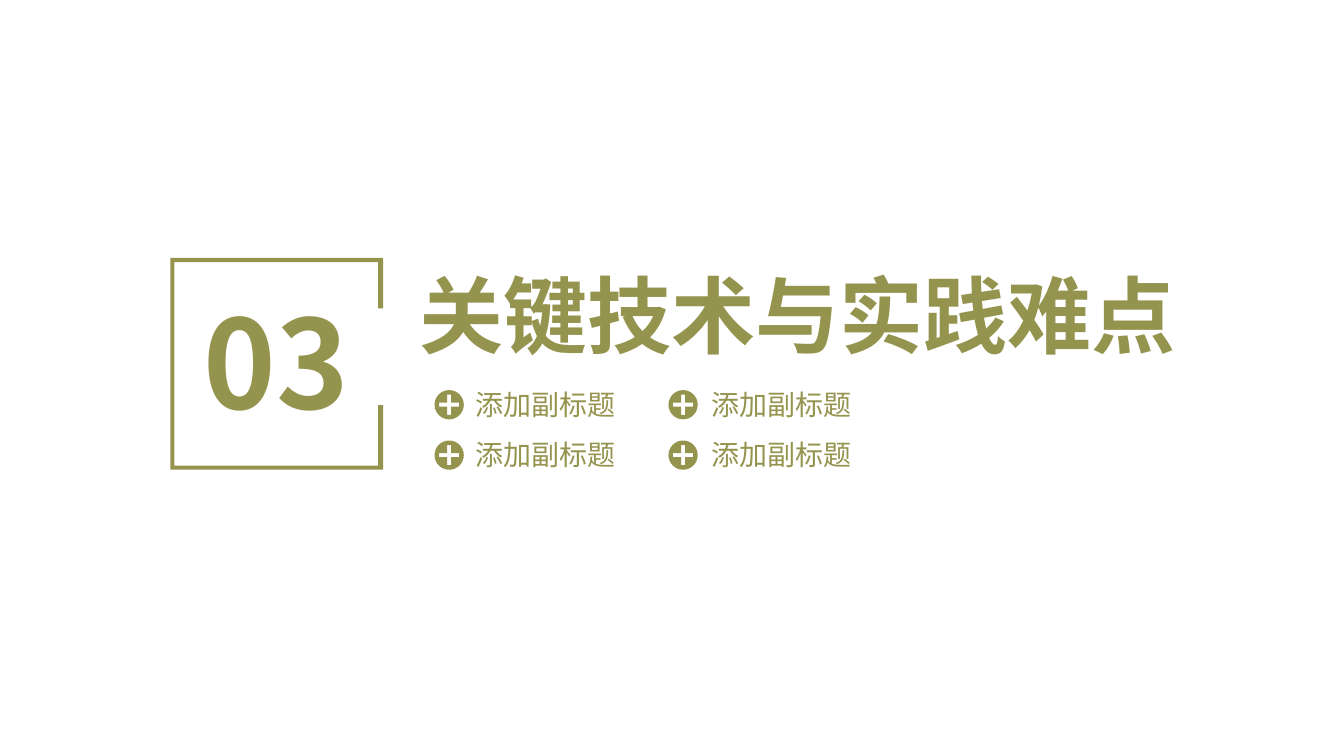
from lxml import etree
from pptx import Presentation
from pptx.dml.color import RGBColor
from pptx.enum.text import MSO_ANCHOR, PP_ALIGN
from pptx.oxml.ns import qn
from pptx.util import Inches, Pt

OLIVE = RGBColor(0x95, 0x94, 0x4F)
FONT = "Noto Sans CJK SC"
LEFT, CENTER = PP_ALIGN.LEFT, PP_ALIGN.CENTER
TOP = MSO_ANCHOR.TOP
TITLE_LAYOUT = 5

ICON_SIZE = 0.29
PLUS_REACH = 0.1
PLUS_HALF = 0.02
ARC_HANDLE = 0.55

ICON_LEFTS = (4.31, 6.63)
LABEL_LEFTS = (4.62, 6.96)
# top of the labels, top of the icons, widths of the two labels
LABEL_ROWS = ((3.8, 3.87, (1.62, 1.76)), (4.29, 4.37, (2.96, 3.04)))

FRAME = [
    (1.69, 2.56), (3.8, 2.56), (3.8, 3.06), (3.75, 3.06),
    (3.75, 2.6), (1.73, 2.6), (1.73, 4.62), (3.75, 4.62),
    (3.75, 4.02), (3.8, 4.02), (3.8, 4.66), (1.69, 4.66),
]


def write_text(box, text, size, bold=False, align=LEFT, margin=None):
    frame = box.text_frame
    frame.word_wrap = True
    frame.vertical_anchor = TOP
    if margin is not None:
        for side in ("left", "top", "right", "bottom"):
            setattr(frame, f"margin_{side}", Inches(margin))
    para = frame.paragraphs[0]
    para.alignment = align
    span = para.add_run()
    span.text = text
    for name, value in {"name": FONT, "size": Pt(size), "bold": bold}.items():
        setattr(span.font, name, value)
    span.font.color.rgb = OLIVE
    east_asian = etree.SubElement(span.font._element, qn("a:ea"))
    east_asian.set("typeface", FONT)


def add_text(slide, bounds, text, size, **formats):
    box = slide.shapes.add_textbox(*map(Inches, bounds))
    write_text(box, text, size, **formats)


def add_outline(slide, contours):
    """Draw closed contours, in inches, as one filled shape."""
    contours = [[(Inches(x), Inches(y)) for x, y in points] for points in contours]
    builder = slide.shapes.build_freeform(*contours[0][0])
    for index, points in enumerate(contours):
        if index:
            builder.move_to(*points[0])
        builder.add_line_segments(points[1:], close=True)
    shape = builder.convert_to_shape()
    shape.shadow.inherit = False
    shape.fill.solid()
    shape.fill.fore_color.rgb = OLIVE
    shape.line.fill.background()
    return shape


def round_corners(shape):
    """Turn the first four lines, a diamond, into quarter circles."""
    center = (shape.width // 2, shape.height // 2)
    for line in list(shape._element.iter(qn("a:lnTo")))[:4]:
        start, end = (
            [int(step[-1].get(axis)) for axis in "xy"]
            for step in (line.getprevious(), line)
        )
        curve = etree.Element(qn("a:cubicBezTo"))
        handles = [
            [round(a + ARC_HANDLE * (b - c)) for a, b, c in zip(near, far, center)]
            for near, far in ((start, end), (end, start))
        ]
        for x, y in (*handles, end):
            etree.SubElement(curve, qn("a:pt"), x=str(x), y=str(y))
        line.getparent().replace(line, curve)


def add_plus_icon(slide, left, top):
    """Draw a disc with a plus cut out of it."""
    radius = ICON_SIZE / 2
    x, y = left + radius, top + radius
    diamond = [(x, y - radius), (x + radius, y), (x, y + radius),
               (x - radius, y), (x, y - radius)]
    arm = [(PLUS_REACH, PLUS_HALF), (PLUS_REACH, -PLUS_HALF), (PLUS_HALF, -PLUS_HALF)]
    plus = []
    for _ in range(4):
        plus += [(x + dx, y + dy) for dx, dy in arm]
        arm = [(dy, -dx) for dx, dy in arm]
    round_corners(add_outline(slide, [diamond, plus]))


def add_title(slide, bounds, text):
    title = slide.shapes.title
    for name, value in zip(("left", "top", "width", "height"), bounds):
        setattr(title, name, Inches(value))
    write_text(title, text, 60, bold=True, margin=0)


def main():
    deck = Presentation()
    deck.slide_width, deck.slide_height = Inches(13.33), Inches(7.5)
    slide = deck.slides.add_slide(deck.slide_layouts[TITLE_LAYOUT])

    add_title(slide, (4.16, 2.61, 7.67, 1.01), "关键技术与实践难点")
    add_outline(slide, [FRAME])
    add_text(slide, (1.95, 2.84, 1.58, 1.48), "03", 88,
             bold=True, align=CENTER, margin=0)
    for label_top, icon_top, widths in LABEL_ROWS:
        for icon_left, label_left, width in zip(ICON_LEFTS, LABEL_LEFTS, widths):
            add_plus_icon(slide, icon_left, icon_top)
            add_text(slide, (label_left, label_top, width, 0.44), "添加副标题", 20)

    deck.save("out.pptx")


if __name__ == "__main__":
    main()
